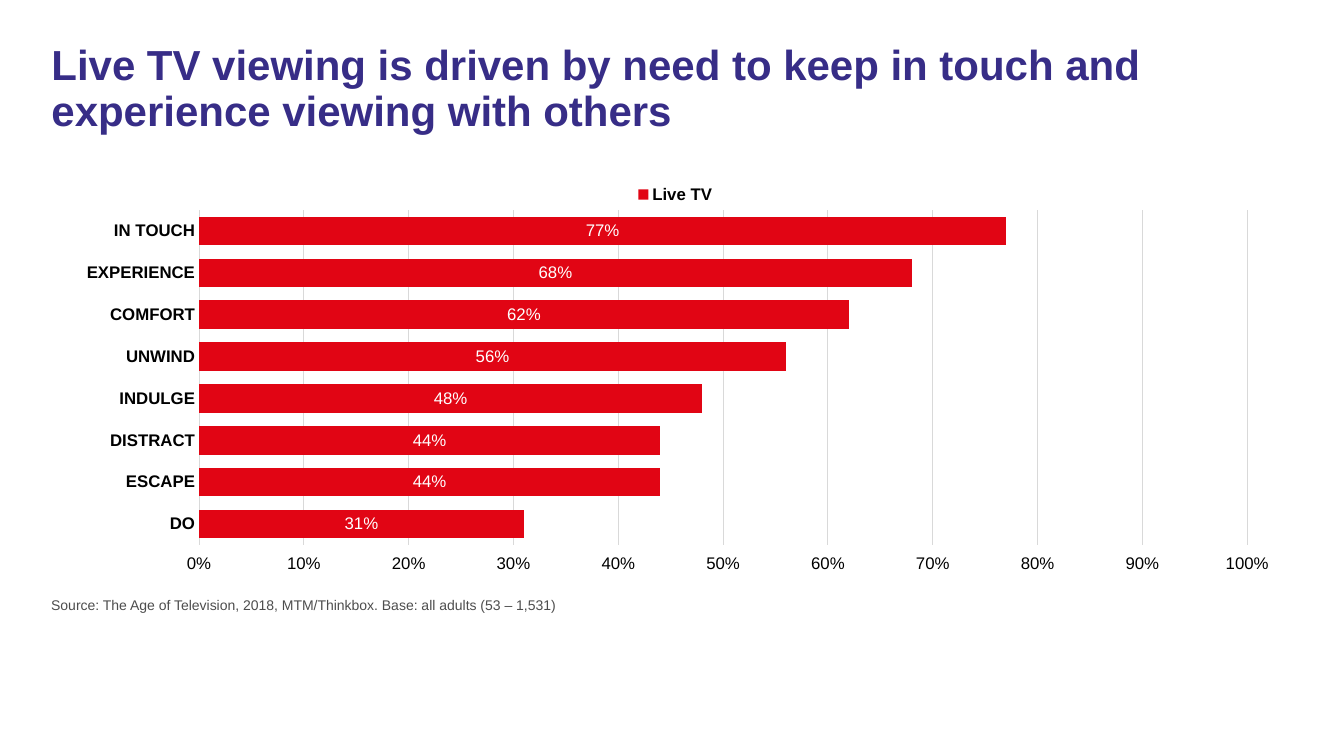
from lxml.etree import SubElement
from pptx import Presentation
from pptx.chart.data import CategoryChartData
from pptx.dml.color import RGBColor
from pptx.enum.chart import (XL_CHART_TYPE, XL_LABEL_POSITION, XL_LEGEND_POSITION,
                             XL_TICK_LABEL_POSITION, XL_TICK_MARK)
from pptx.enum.text import MSO_ANCHOR, MSO_AUTO_SIZE, PP_ALIGN
from pptx.oxml.ns import qn
from pptx.util import Inches, Pt

TITLE = "Live TV viewing is driven by need to keep in touch and experience viewing with others"
SOURCE = "Source: The Age of Television, 2018, MTM/Thinkbox. Base: all adults (53 – 1,531)"
SERIES = "Live TV"
NEEDS = {
    "IN TOUCH": 0.77,
    "EXPERIENCE": 0.68,
    "COMFORT": 0.62,
    "UNWIND": 0.56,
    "INDULGE": 0.48,
    "DISTRACT": 0.44,
    "ESCAPE": 0.44,
    "DO": 0.31,
}

PURPLE = RGBColor(0x37, 0x2D, 0x87)
RED = RGBColor(0xE1, 0x05, 0x14)
GREY = RGBColor(0x4D, 0x4D, 0x4D)
GRID = RGBColor(0xD9, 0xD9, 0xD9)
BLACK = RGBColor(0, 0, 0)
WHITE = RGBColor(255, 255, 255)

LEFT, WIDTH = Inches(0.41), Inches(12.4)


def set_font(font, size, color, bold=False):
    """Apply the slide's typeface with a size, colour and weight."""
    font.name = "Arial"
    font.size = Pt(size)
    font.color.rgb = color
    font.bold = bold


def set_layout(parent, position, **settings):
    """Place a chart part by fractions of the chart area."""
    for old_layout in parent.findall(qn("c:layout")):
        parent.remove(old_layout)
    layout = SubElement(parent, qn("c:layout"))
    manual = SubElement(layout, qn("c:manualLayout"))
    for name, value in settings.items():
        SubElement(manual, qn(f"c:{name}")).set("val", str(value))
    parent.insert(position, layout)


def add_title(slide):
    """Write the headline in the title placeholder."""
    title = slide.shapes.title
    title.left, title.top, title.width, title.height = LEFT, Inches(0.39), WIDTH, Inches(1.12)
    frame = title.text_frame
    frame.text = TITLE
    frame.word_wrap = True
    frame.auto_size = MSO_AUTO_SIZE.NONE
    frame.vertical_anchor = MSO_ANCHOR.TOP
    paragraph = frame.paragraphs[0]
    paragraph.alignment = PP_ALIGN.LEFT
    paragraph.line_spacing = 0.9
    set_font(paragraph.font, 30, PURPLE, True)


def add_source(slide):
    """Write the source line below the chart."""
    frame = slide.shapes.add_textbox(LEFT, Inches(5.87), WIDTH, Inches(0.33)).text_frame
    frame.word_wrap = True
    frame.text = SOURCE
    set_font(frame.paragraphs[0].font, 10, GREY)


def add_needs_chart(slide):
    """Draw the bar chart of viewing needs."""
    data = CategoryChartData(number_format="0%")
    data.categories = list(NEEDS)
    data.add_series(SERIES, list(NEEDS.values()))
    chart = slide.shapes.add_chart(XL_CHART_TYPE.BAR_STACKED, Inches(0.66), Inches(1.64),
                                   Inches(11.95), Inches(4.05), data).chart
    chart.has_title = False
    set_font(chart.font, 10, BLACK)

    plot = chart.plots[0]
    plot.gap_width, plot.overlap = 46, 100
    plot.vary_by_categories = False
    fill = plot.series[0].format.fill
    fill.solid()
    fill.fore_color.rgb = RED
    plot.has_data_labels = True
    labels = plot.data_labels
    labels.show_value = True
    labels.number_format, labels.number_format_is_linked = "0%", False
    labels.position = XL_LABEL_POSITION.CENTER
    set_font(labels.font, 12, WHITE)

    for axis, bold in ((chart.category_axis, True), (chart.value_axis, False)):
        axis.major_tick_mark = axis.minor_tick_mark = XL_TICK_MARK.NONE
        axis.format.line.fill.background()
        set_font(axis.tick_labels.font, 12, BLACK, bold)
    chart.category_axis.reverse_order = True
    values = chart.value_axis
    values.tick_label_position = XL_TICK_LABEL_POSITION.HIGH
    values.minimum_scale, values.maximum_scale, values.major_unit = 0, 1, 0.1
    values.tick_labels.number_format = "0%"
    values.tick_labels.number_format_is_linked = False
    values.has_major_gridlines = True
    values.major_gridlines.format.line.color.rgb = GRID
    values.major_gridlines.format.line.width = Pt(0.75)

    chart.has_legend = True
    chart.legend.position = XL_LEGEND_POSITION.BOTTOM
    chart.legend.include_in_layout = False
    set_font(chart.legend.font, 12, BLACK, True)

    plot_area = chart.element.find(".//" + qn("c:plotArea"))
    set_layout(plot_area, 0, layoutTarget="inner", xMode="edge", yMode="edge",
               x=0.11, y=0.11, w=0.87, h=0.82)
    legend = chart.element.find(".//" + qn("c:legend"))
    set_layout(legend, 1, xMode="edge", yMode="edge", x=0.47, y=0.04)


def main():
    """Build and save the slide."""
    presentation = Presentation()
    presentation.slide_width, presentation.slide_height = Inches(13.33), Inches(7.5)
    slide = presentation.slides.add_slide(presentation.slide_layouts[5])
    add_title(slide)
    add_source(slide)
    add_needs_chart(slide)
    presentation.save("out.pptx")


if __name__ == "__main__":
    main()
